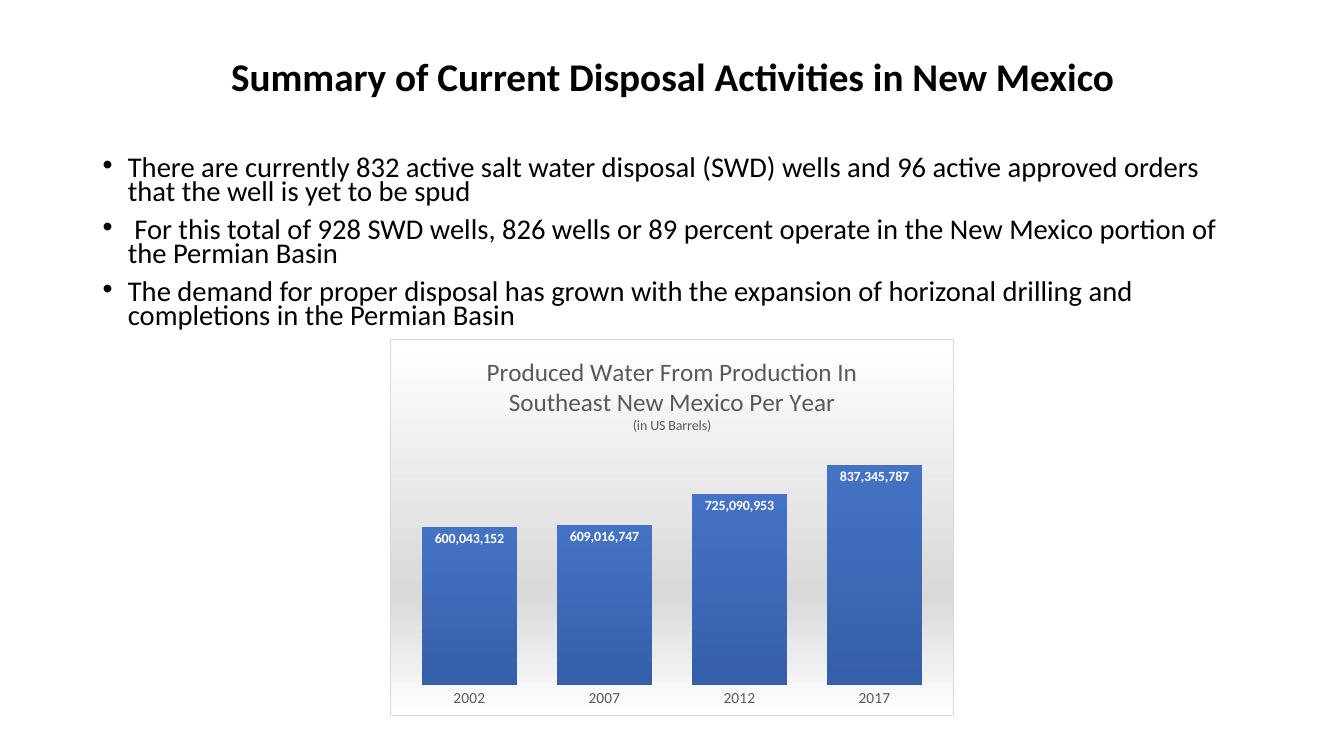
from lxml import etree
from pptx import Presentation
from pptx.chart.data import CategoryChartData
from pptx.dml.color import RGBColor
from pptx.enum.chart import XL_CHART_TYPE, XL_LABEL_POSITION, XL_TICK_MARK
from pptx.enum.text import MSO_ANCHOR, PP_ALIGN
from pptx.oxml import parse_xml
from pptx.oxml.ns import nsdecls, qn
from pptx.util import Inches, Pt

COLUMNS = XL_CHART_TYPE.COLUMN_CLUSTERED
INSIDE_END = XL_LABEL_POSITION.INSIDE_END
NO_TICK = XL_TICK_MARK.NONE
TOP, MIDDLE = MSO_ANCHOR.TOP, MSO_ANCHOR.MIDDLE
LEFT, CENTER = PP_ALIGN.LEFT, PP_ALIGN.CENTER

HEADING = "Summary of Current Disposal Activities in New Mexico"
POINTS = [
    "There are currently 832 active salt water disposal (SWD) wells and 96 active "
    "approved orders that the well is yet to be spud",
    " For this total of 928 SWD wells, 826 wells or 89 percent operate in the "
    "New Mexico portion of the Permian Basin",
    "The demand for proper disposal has grown with the expansion of horizonal "
    "drilling and completions in the Permian Basin",
]
CHART_TITLE = "Produced Water From Production In Southeast New Mexico Per Year"
CHART_UNIT = "(in US Barrels)"
BARRELS = {
    "2002": 600043152,
    "2007": 609016747,
    "2012": 725090953,
    "2017": 837345787,
}
AXIS_TOP = 900000000


class Theme:
    font = "Calibri"
    text, muted, label = "000000", "595959", "FFFFFF"
    border = "D9D9D9"
    chart_stops = [(0, "FFFFFF"), (68, "D9D9D9"), (100, "FFFFFF")]
    bar_stops = [(0, "4472C4"), (100, "355FA9")]
    heading_size, body_size = 28, 20.4
    chart_title_size, unit_size, axis_size, label_size = 18, 10, 11, 10


def style_font(font, size, color, bold=False):
    font.name = Theme.font
    font.size = Pt(size)
    font.bold = bold
    font.color.rgb = RGBColor.from_string(color)


def add_text(slide, area, lines, *, size, bold=False, align=LEFT, anchor=TOP,
             line_spacing=1.0, space_before=0, bullet=None):
    box = slide.shapes.add_textbox(*map(Inches, area))
    frame = box.text_frame
    frame.word_wrap = True
    frame.vertical_anchor = anchor
    for index, line in enumerate(lines):
        para = frame.add_paragraph() if index else frame.paragraphs[0]
        para.alignment = align
        para.line_spacing = line_spacing
        para.space_before = Pt(space_before)
        span = para.add_run()
        span.text = line
        style_font(span.font, size, Theme.text, bold)
        if bullet:
            add_bullet(para, bullet, Inches(0.25))


def add_bullet(para, character, indent):
    properties = para._p.get_or_add_pPr()
    properties.set("marL", str(indent))
    properties.set("indent", str(-indent))
    etree.SubElement(properties, qn("a:buFont"), typeface="Arial")
    etree.SubElement(properties, qn("a:buChar"), char=character)


def shape_properties(stops, border=None):
    """Chart part format: a top-to-bottom gradient and an optional thin border."""
    stop_xml = "".join(
        f'<a:gs pos="{percent * 1000}"><a:srgbClr val="{color}"/></a:gs>'
        for percent, color in stops)
    line_fill = (f'<a:solidFill><a:srgbClr val="{border}"/></a:solidFill>'
                 if border else "<a:noFill/>")
    return parse_xml(
        f'<c:spPr {nsdecls("c", "a")}><a:gradFill><a:gsLst>{stop_xml}</a:gsLst>'
        f'<a:lin ang="5400000" scaled="0"/></a:gradFill>'
        f'<a:ln w="{Pt(0.75)}">{line_fill}</a:ln></c:spPr>')


def place_plot(chart, x, y, width, height):
    """Fix the inner plot area, in fractions of the chart."""
    places = {"x": x, "y": y, "w": width, "h": height}
    place_xml = "".join(f'<c:{key} val="{value}"/>' for key, value in places.items())
    layout = parse_xml(
        f'<c:layout {nsdecls("c")}><c:manualLayout><c:layoutTarget val="inner"/>'
        f'<c:xMode val="edge"/><c:yMode val="edge"/>{place_xml}'
        f'</c:manualLayout></c:layout>')
    plot_area = chart.element.find(".//" + qn("c:plotArea"))
    for old_layout in plot_area.findall(qn("c:layout")):
        plot_area.remove(old_layout)
    plot_area.insert(0, layout)


def add_barrel_chart(slide, area):
    data = CategoryChartData(number_format="#,##0")
    data.categories = list(BARRELS)
    data.add_series("Series 1", list(BARRELS.values()))
    chart = slide.shapes.add_chart(COLUMNS, *map(Inches, area), data).chart
    style_font(chart.font, Theme.label_size, Theme.text)
    chart.has_legend = False

    title = chart.chart_title.text_frame
    title_lines = [(CHART_TITLE, Theme.chart_title_size), (CHART_UNIT, Theme.unit_size)]
    for index, (line, size) in enumerate(title_lines):
        para = title.add_paragraph() if index else title.paragraphs[0]
        para.alignment = CENTER
        span = para.add_run()
        span.text = line
        style_font(span.font, size, Theme.muted)

    years = chart.category_axis
    years.major_tick_mark = NO_TICK
    years.format.line.fill.background()
    style_font(years.tick_labels.font, Theme.axis_size, Theme.muted)

    amounts = chart.value_axis
    amounts.minimum_scale, amounts.maximum_scale = 0, AXIS_TOP
    amounts.has_major_gridlines = False
    amounts.visible = False

    plot = chart.plots[0]
    plot.gap_width = 41
    plot.vary_by_categories = False
    plot.has_data_labels = True
    labels = plot.data_labels
    labels.show_value = True
    labels.position = INSIDE_END
    labels.number_format, labels.number_format_is_linked = "#,##0", False
    style_font(labels.font, Theme.label_size, Theme.label, bold=True)

    bars = plot.series[0]
    bars.format.fill.background()
    plain = bars._element.find(qn("c:spPr"))
    plain.getparent().replace(plain, shape_properties(Theme.bar_stops))
    chart.element.find(qn("c:txPr")).addprevious(
        shape_properties(Theme.chart_stops, Theme.border))
    place_plot(chart, 0.02, 0.29, 0.96, 0.63)


def main():
    deck = Presentation()
    deck.slide_width, deck.slide_height = Inches(13.33), Inches(7.5)
    page = deck.slides.add_slide(deck.slide_layouts[6])
    add_text(page, (0.92, 0.4, 11.5, 0.77), [HEADING], size=Theme.heading_size,
             bold=True, align=CENTER, anchor=MIDDLE, line_spacing=0.9)
    add_text(page, (0.92, 1.52, 11.5, 1.84), POINTS, size=Theme.body_size,
             line_spacing=0.7, space_before=10, bullet="•")
    add_barrel_chart(page, (3.87, 3.36, 5.59, 3.74))
    deck.save("out.pptx")


if __name__ == "__main__":
    main()
